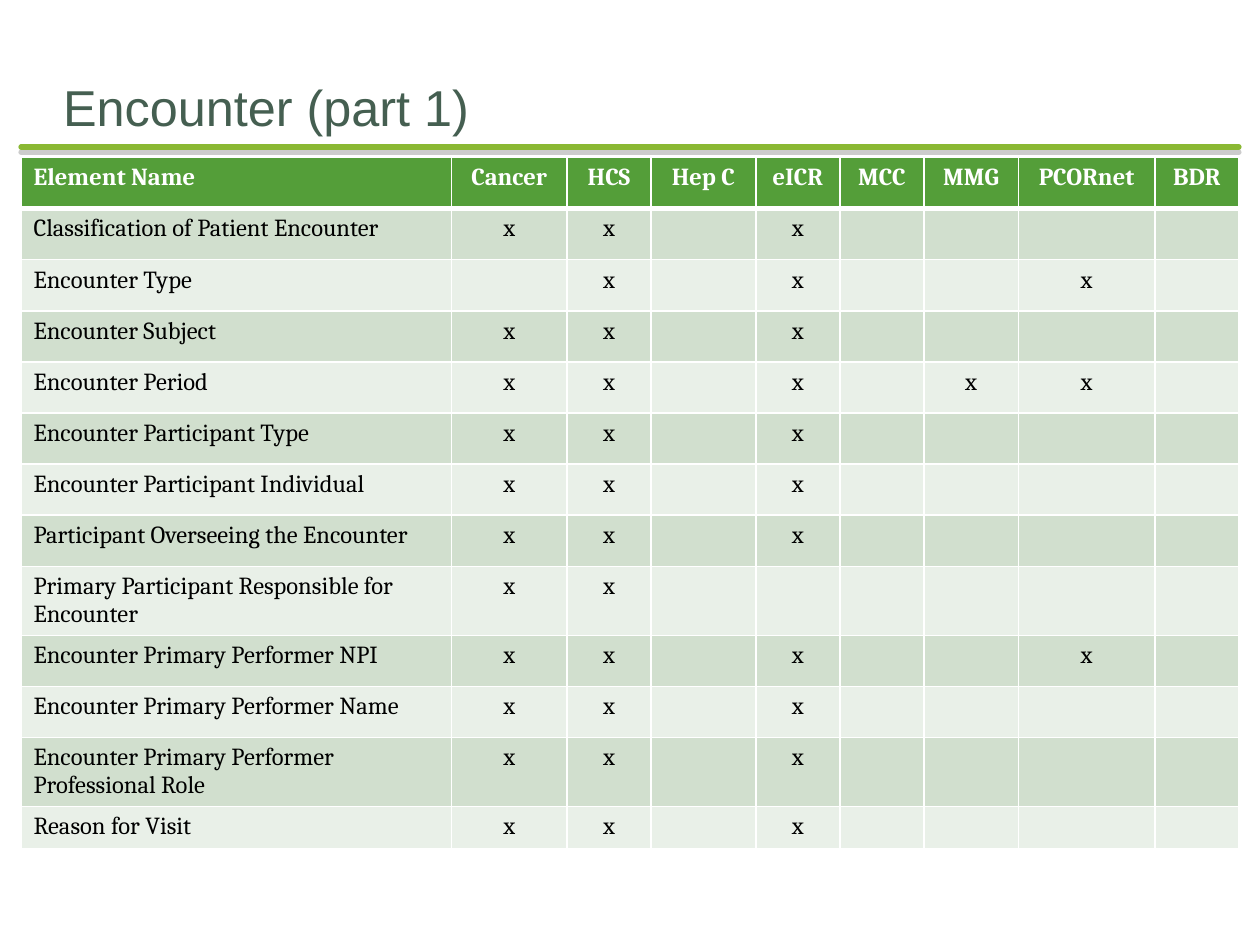
from dataclasses import dataclass
from lxml.etree import SubElement
from pptx import Presentation
from pptx.dml.color import RGBColor
from pptx.enum.shapes import MSO_CONNECTOR
from pptx.enum.text import MSO_ANCHOR, MSO_AUTO_SIZE, PP_ALIGN
from pptx.oxml.ns import qn
from pptx.slide import Slide
from pptx.util import Inches, Pt

COLORS = {
    "title": "455F51", "rule": "8AB833", "shadow": "808080", "header": "549E39",
    "odd": "D1DFCE", "even": "E9F0E8", "white": "FFFFFF", "black": "000000",
}
COLUMNS = {
    "Element Name": 41, "Cancer": 11, "HCS": 8, "Hep C": 10, "eICR": 8,
    "MCC": 8, "MMG": 9, "PCORnet": 13, "BDR": 8,
}
USUAL = ("Cancer", "HCS", "eICR")
ELEMENTS = [
    ("Classification of Patient Encounter", USUAL),
    ("Encounter Type", ("HCS", "eICR", "PCORnet")),
    ("Encounter Subject", USUAL),
    ("Encounter Period", USUAL + ("MMG", "PCORnet")),
    ("Encounter Participant Type", USUAL),
    ("Encounter Participant Individual", USUAL),
    ("Participant Overseeing the Encounter", USUAL),
    ("Primary Participant Responsible for Encounter", ("Cancer", "HCS")),
    ("Encounter Primary Performer NPI", USUAL + ("PCORnet",)),
    ("Encounter Primary Performer Name", USUAL),
    ("Encounter Primary Performer Professional Role", USUAL),
    ("Reason for Visit", USUAL),
]
ROW_HEIGHT, LAST_ROW_HEIGHT = 4.87, 1.6


def grid(units):
    return Inches(units / 12)


def color(name):
    return RGBColor.from_string(COLORS[name])


@dataclass
class Page:
    slide: Slide
    title_font: str = "Arial"
    table_font: str = "Cambria"
    title_size: float = 28.8
    table_size: float = 14

    def format_run(self, span, font, size, tint, bold=False):
        span.font.name = font
        span.font.size = Pt(size)
        span.font.bold = bold
        span.font.color.rgb = color(tint)

    def title(self, text, left, top, width, height):
        box = self.slide.shapes.title
        box.left, box.top, box.width, box.height = map(grid, (left, top, width, height))
        frame = box.text_frame
        frame.text = text
        frame.auto_size = MSO_AUTO_SIZE.NONE
        frame.vertical_anchor = MSO_ANCHOR.BOTTOM
        frame.margin_left = frame.margin_right = frame.margin_bottom = 0
        frame.margin_top = Inches(0.05)
        para = frame.paragraphs[0]
        para.alignment = PP_ALIGN.LEFT
        self.format_run(para.runs[0], self.title_font, self.title_size, "title")

    def rule(self, left, right, top):
        line = self.slide.shapes.add_connector(
            MSO_CONNECTOR.STRAIGHT, grid(left), grid(top), grid(right), grid(top))
        line.line.color.rgb = color("rule")
        line.line.width = Pt(3)
        line.line._get_or_add_ln().set("cap", "rnd")
        effects = SubElement(line._element.spPr, qn("a:effectLst"))
        shadow = SubElement(effects, qn("a:outerShdw"), blurRad="0",
                            dist=str(Pt(3)), dir="5400000", rotWithShape="0")
        tint = SubElement(shadow, qn("a:srgbClr"), val=COLORS["shadow"])
        SubElement(tint, qn("a:alpha"), val="40000")

    def borders(self, cell, top, bottom):
        properties = cell._tc.get_or_add_tcPr()
        for side, width in (("L", 1), ("R", 1), ("T", top), ("B", bottom)):
            edge = SubElement(properties, qn(f"a:ln{side}"), w=str(Pt(width)))
            fill = SubElement(edge, qn("a:solidFill"))
            SubElement(fill, qn("a:srgbClr"), val=COLORS["white"])

    def cell(self, cell, text, row, column):
        header = row == 0
        self.borders(cell, 3 if row == 1 else 1, 3 if header else 1)
        cell.fill.solid()
        cell.fill.fore_color.rgb = color("header" if header else "odd" if row % 2 else "even")
        para = cell.text_frame.paragraphs[0]
        para.alignment = PP_ALIGN.CENTER if column else PP_ALIGN.LEFT
        if text:
            para.text = text
            self.format_run(para.runs[0], self.table_font, self.table_size,
                            "white" if header else "black", header)
        else:
            SubElement(para._p, qn("a:endParaRPr"), sz=str(self.table_size * 100))

    def table(self, columns, elements, left, top):
        rows = [list(columns)]
        for name, sources in elements:
            rows.append([name] + ["x" if source in sources else "" for source in rows[0][1:]])
        heights = [ROW_HEIGHT] * len(elements) + [LAST_ROW_HEIGHT]
        table = self.slide.shapes.add_table(
            len(rows), len(columns), grid(left), grid(top),
            grid(sum(columns.values())), grid(sum(heights))).table
        for column, width in zip(table.columns, columns.values()):
            column.width = grid(width)
        for row, (texts, height) in enumerate(zip(rows, heights)):
            table.rows[row].height = grid(height)
            for column, text in enumerate(texts):
                self.cell(table.cell(row, column), text, row, column)


def main():
    deck = Presentation()
    deck.slide_width, deck.slide_height = Inches(10), Inches(7.5)
    page = Page(deck.slides.add_slide(deck.slide_layouts[5]))
    page.rule(2, 118, 14)
    page.title("Encounter (part 1)", 6, 6, 108, 7)
    page.table(COLUMNS, ELEMENTS, 2, 15)
    deck.save("out.pptx")


if __name__ == "__main__":
    main()
